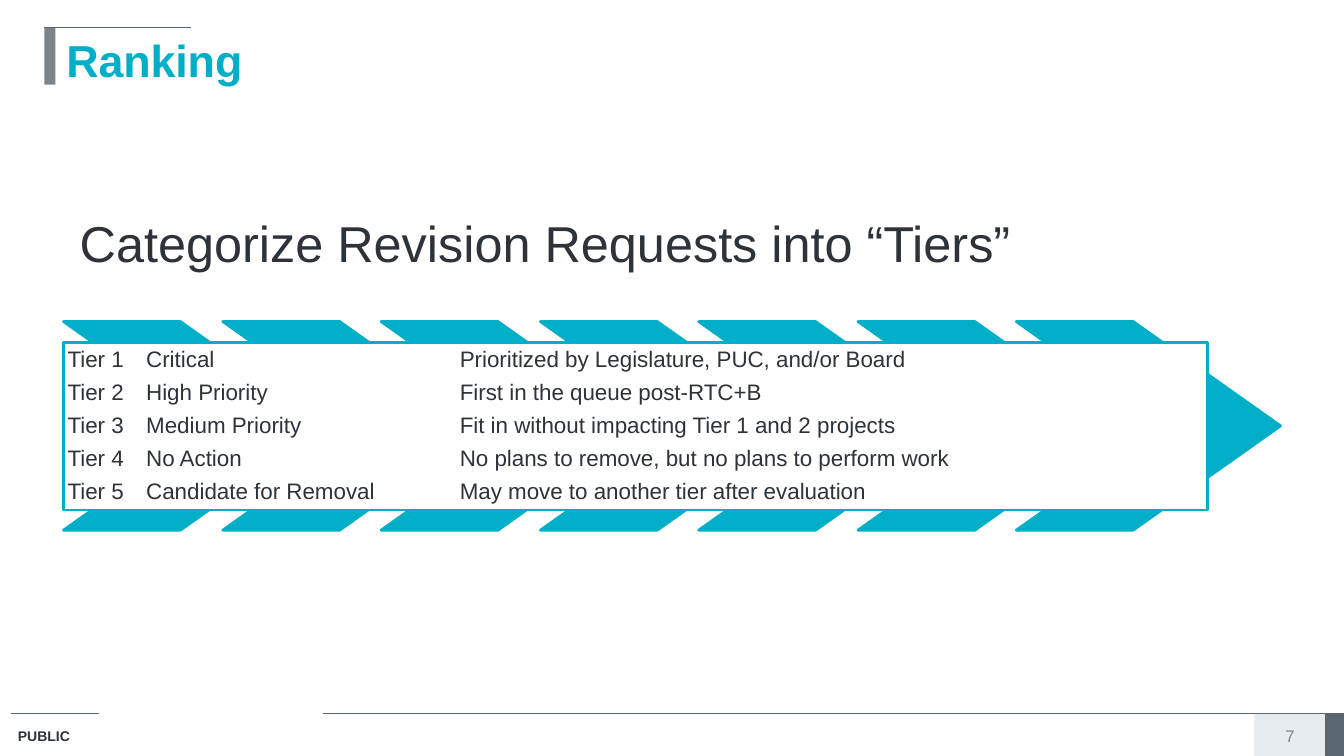
from dataclasses import dataclass

from lxml import etree
from pptx import Presentation
from pptx.dml.color import RGBColor
from pptx.enum.shapes import MSO_CONNECTOR, MSO_SHAPE
from pptx.enum.text import MSO_ANCHOR, PP_ALIGN
from pptx.oxml.ns import qn
from pptx.util import Pt

RECT, CHEVRON = MSO_SHAPE.RECTANGLE, MSO_SHAPE.CHEVRON
STRAIGHT = MSO_CONNECTOR.STRAIGHT
TOP, MIDDLE, BOTTOM = MSO_ANCHOR.TOP, MSO_ANCHOR.MIDDLE, MSO_ANCHOR.BOTTOM
LEFT, CENTER = PP_ALIGN.LEFT, PP_ALIGN.CENTER
EMU_PER_PX = 9144


@dataclass(frozen=True)
class Theme:
    font: str = "Arial"
    accent: str = "00AEC7"
    ink: str = "2D3338"
    slate: str = "5B6770"
    gray: str = "7C858C"
    pale: str = "E6EBF0"
    white: str = "FFFFFF"
    title: int = 32
    heading: int = 36
    body: int = 16
    number: int = 12
    footer: int = 10
    hairline: float = 0.75
    outline: float = 2


def px(n):
    return n * EMU_PER_PX


def rgb(color):
    return RGBColor.from_string(color)


def add_text(p, text, *, font, size, color, bold=False, align=LEFT,
             line=None, after=None, tabs=(), spacing=None):
    p.alignment = align
    if line:
        p.line_spacing = line
    if after:
        p.space_after = Pt(after)
    if tabs:
        stops = etree.SubElement(p._p.get_or_add_pPr(), qn("a:tabLst"))
        for pos in tabs:
            etree.SubElement(stops, qn("a:tab"), pos=str(px(pos)), algn="l")
    r = p.add_run()
    r.text = text
    r.font.name = font
    r.font.size = Pt(size)
    r.font.bold = bold
    r.font.color.rgb = rgb(color)
    if spacing:
        r._r.get_or_add_rPr().set("spc", str(spacing))


class Deck:
    def __init__(self, theme, width, height):
        self.theme = theme
        self.prs = Presentation()
        self.prs.slide_width, self.prs.slide_height = px(width), px(height)
        self.s = self.prs.slides.add_slide(self.prs.slide_layouts[6])

    def shape(self, kind, x, y, w, h, fill, line=None, weight=None, adj=None):
        sp = self.s.shapes.add_shape(kind, px(x), px(y), px(w), px(h))
        sp.shadow.inherit = False
        sp.fill.solid()
        sp.fill.fore_color.rgb = rgb(fill)
        if line:
            sp.line.color.rgb = rgb(line)
            sp.line.width = Pt(weight)
        else:
            sp.line.fill.background()
        if adj is not None:
            sp.adjustments[0] = adj

    def rule(self, x1, x2, y):
        sp = self.s.shapes.add_connector(STRAIGHT, px(x1), px(y), px(x2), px(y))
        sp.line.color.rgb = rgb(self.theme.slate)
        sp.line.width = Pt(self.theme.hairline)
        etree.SubElement(sp._element.spPr, qn("a:effectLst"))

    def text(self, x, y, w, h, lines, inset=(10, 5), anchor=TOP, **style):
        sp = self.s.shapes.add_textbox(px(x), px(y), px(w), px(h))
        tf = sp.text_frame
        tf.word_wrap = True
        tf.vertical_anchor = anchor
        tf.margin_left = tf.margin_right = px(inset[0])
        tf.margin_top = tf.margin_bottom = px(inset[1])
        for i, line in enumerate(lines):
            p = tf.add_paragraph() if i else tf.paragraphs[0]
            add_text(p, line, font=self.theme.font, **style)


TIERS = [
    ("Critical", "Prioritized by Legislature, PUC, and/or Board"),
    ("High Priority", "First in the queue post-RTC+B"),
    ("Medium Priority", "Fit in without impacting Tier 1 and 2 projects"),
    ("No Action", "No plans to remove, but no plans to perform work"),
    ("Candidate for Removal", "May move to another tier after evaluation"),
]


def main():
    t = Theme()
    d = Deck(t, 1333, 750)

    d.shape(RECT, 1244, 708, 78, 42, t.pale)
    d.shape(RECT, 1315, 708, 18, 42, t.slate, t.slate, t.hairline)
    d.rule(11, 98, 708)
    d.rule(320, 1320, 708)
    d.text(8, 717, 103, 28, ["PUBLIC"], size=t.footer, color=t.ink, bold=True)
    d.text(1244, 718, 71, 24, ["7"], anchor=MIDDLE, size=t.number,
           color=t.gray, align=CENTER)

    d.shape(RECT, 44, 27, 11, 57, t.gray)
    d.rule(44, 189, 27)
    d.text(56, 28, 1244, 57, ["Ranking"], size=t.title, color=t.accent,
           bold=True, spacing=-10)

    d.text(64, 184, 1120, 102, ["Categorize Revision Requests into “Tiers”"],
           inset=(15, 15), anchor=BOTTOM, size=t.heading, color=t.ink,
           line=0.9, after=14.5)

    for i in range(7):
        d.shape(CHEVRON, 63 + (i * 315 + 1) // 2, 319, 262, 207, t.accent,
                t.accent, t.outline, adj=0.706)
    panel = (63, 340, 1135, 166)
    d.shape(RECT, *panel, t.white, t.accent, t.outline)
    rows = [f"Tier {n}\t{name}\t{note}"
            for n, (name, note) in enumerate(TIERS, 1)]
    d.text(*panel, rows, inset=(4, 4), anchor=MIDDLE, size=t.body,
           color=t.ink, line=0.9, after=6.3, tabs=(78, 389))

    d.prs.save("out.pptx")


if __name__ == "__main__":
    main()
